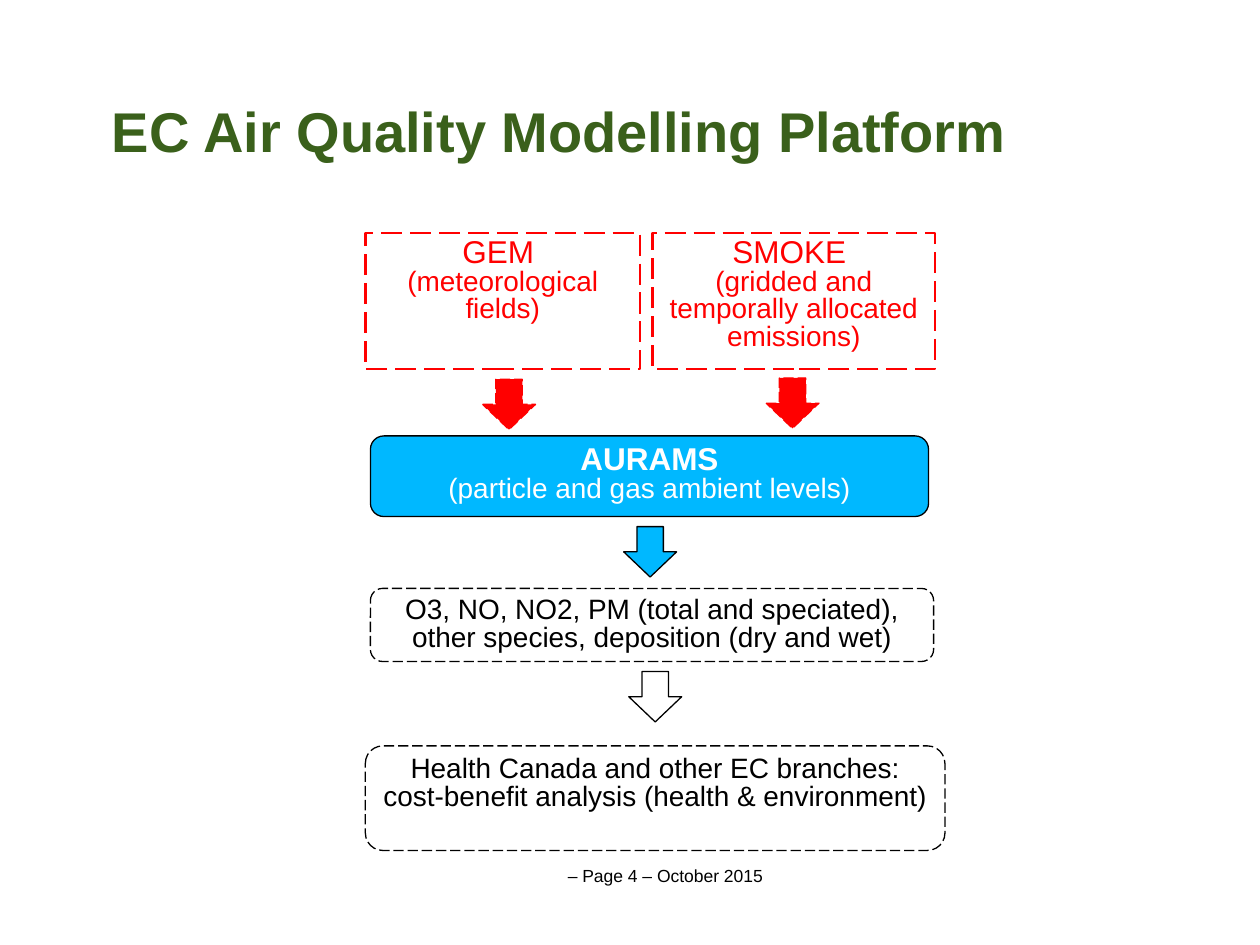
"""Build the air quality modelling platform slide."""
from pptx import Presentation
from pptx.dml.color import RGBColor
from pptx.enum.dml import MSO_LINE_DASH_STYLE as Dash
from pptx.enum.shapes import MSO_SHAPE as Kind
from pptx.enum.text import MSO_ANCHOR as Anchor, PP_ALIGN as Align
from pptx.util import Inches, Pt

RED, BLUE, GREEN = "FF0000", "00B8FF", "3A601B"
BLACK, WHITE = "000000", "FFFFFF"


def paint(code):
    return RGBColor.from_string(code)


class Deck:
    font = "Arial"
    tight = 0.81

    def __init__(self):
        self.file = Presentation()
        self.file.slide_width, self.file.slide_height = Inches(10), Inches(7.5)
        self.slide = self.file.slides.add_slide(self.file.slide_layouts[6])

    def fill_text(self, frame, lines, color, align=Align.CENTER, space=tight, anchor=Anchor.TOP):
        frame.word_wrap = True
        frame.vertical_anchor = anchor
        for i, (words, size, bold) in enumerate(lines):
            para = frame.add_paragraph() if i else frame.paragraphs[0]
            para.alignment, para.line_spacing = align, space
            run = para.add_run()
            run.text = words
            font = run.font
            font.name, font.size, font.bold = self.font, Pt(size), bold
            font.color.rgb = paint(color)

    def label(self, area, line, color, **style):
        box = self.slide.shapes.add_textbox(*map(Inches, area))
        self.fill_text(box.text_frame, [line], color, **style)

    def shape(self, kind, area, fill, edge, width=0.75, dash=False):
        item = self.slide.shapes.add_shape(kind, *map(Inches, area))
        item.shadow.inherit = False
        item.fill.solid()
        item.fill.fore_color.rgb = paint(fill)
        item.line.color.rgb = paint(edge)
        item.line.width = Pt(width)
        if dash:
            item.line.dash_style = Dash.LONG_DASH
        return item

    def source(self, left, width, name, note):
        area = left, 1.85, width, 1.08
        item = self.shape(Kind.RECTANGLE, area, WHITE, RED, 1.5, True)
        self.fill_text(item.text_frame, [(name, 18, False), (note, 16, False)], RED)

    def step(self, area, lines, fill=WHITE, color=BLACK, dash=True):
        item = self.shape(Kind.ROUNDED_RECTANGLE, area, fill, BLACK, dash=dash)
        self.fill_text(item.text_frame, lines, color)

    def arrow(self, left, top, fill, edge=BLACK, dash=False):
        self.shape(Kind.DOWN_ARROW, (left, top, 0.42, 0.4), fill, edge, dash=dash)


def main():
    deck = Deck()
    deck.label((0.83, 6.82, 8.9, 0.27), ("– Page 4 – October 2015", 10, False), BLACK, space=1.0)
    deck.label((0.79, 0.67, 9.17, 0.83), ("EC Air Quality Modelling Platform", 32, True),
               GREEN, align=Align.LEFT, anchor=Anchor.MIDDLE)

    deck.source(2.9, 2.18, "GEM ", "(meteorological fields)")
    deck.source(5.18, 2.24, "SMOKE ", "(gridded and temporally allocated emissions)")

    deck.step((2.94, 3.46, 4.43, 0.64),
              [("AURAMS", 18, True), ("(particle and gas ambient levels)", 16, False)],
              BLUE, WHITE, False)
    deck.step((2.94, 4.67, 4.47, 0.58),
              [("O3, NO, NO2, PM (total and speciated), "
                "other species, deposition (dry and wet)", 16, False)])
    deck.step((2.9, 5.92, 4.6, 0.83),
              [("Health Canada and other EC branches: "
                "cost-benefit analysis (health & environment)", 16, False)])

    deck.arrow(3.83, 3.01, RED, RED, True)
    deck.arrow(6.08, 3.0, RED, RED, True)
    deck.arrow(4.95, 4.18, BLUE)
    deck.arrow(4.99, 5.33, WHITE)
    deck.file.save("out.pptx")


if __name__ == "__main__":
    main()
